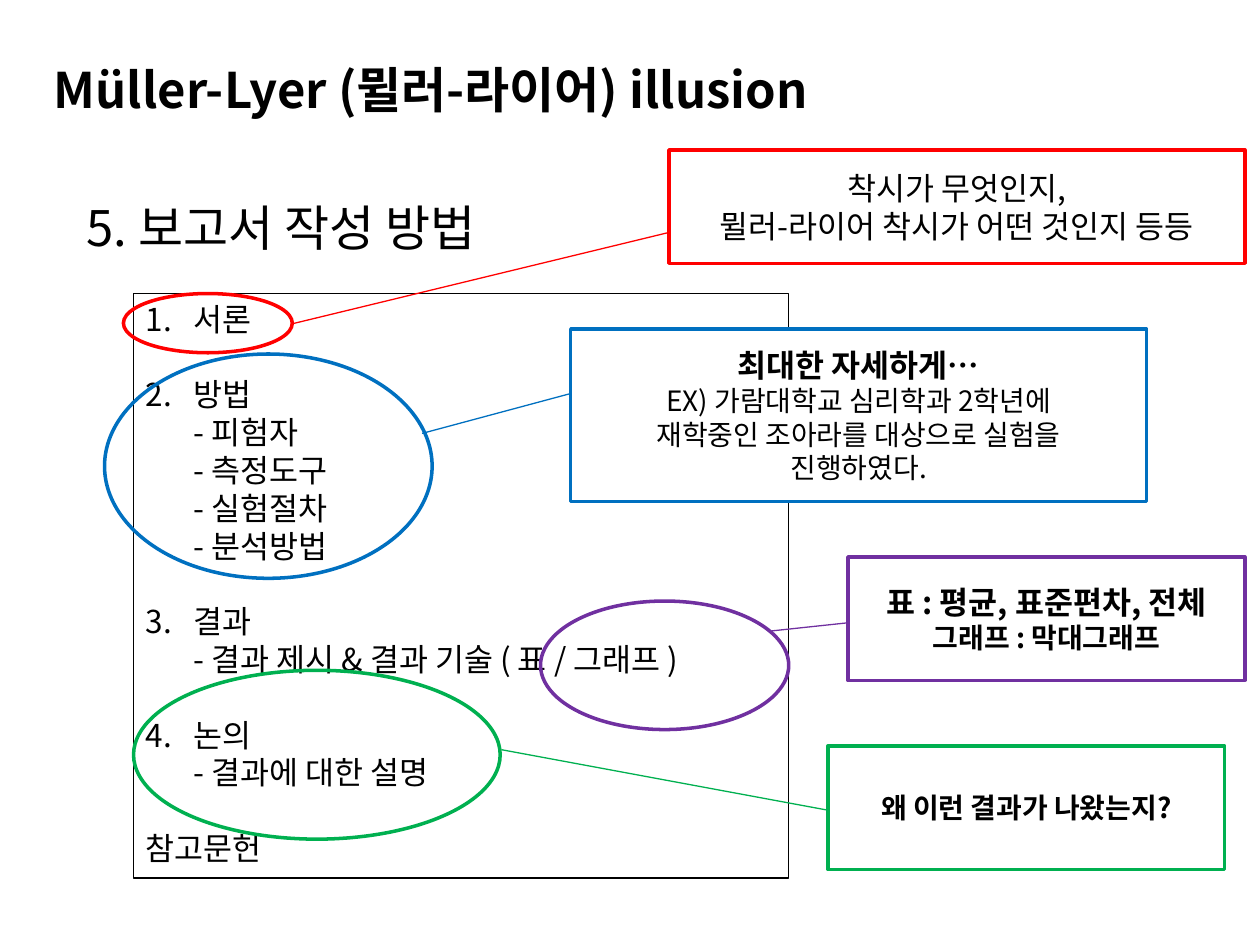
from lxml import etree
from pptx import Presentation
from pptx.dml.color import RGBColor
from pptx.enum.shapes import MSO_CONNECTOR, MSO_SHAPE
from pptx.enum.text import MSO_ANCHOR, PP_ALIGN
from pptx.oxml.ns import qn
from pptx.util import Inches, Pt

FONT = "Noto Sans CJK KR"
LINE_HEIGHT = 1.2
BLACK = RGBColor(0x00, 0x00, 0x00)
WHITE = RGBColor(0xFF, 0xFF, 0xFF)
RED = RGBColor(0xFF, 0x00, 0x00)
BLUE = RGBColor(0x00, 0x70, 0xC0)
PURPLE = RGBColor(0x70, 0x30, 0xA0)
GREEN = RGBColor(0x00, 0xB0, 0x50)

HEADINGS = [
    ("Müller-Lyer (뮐러-라이어) illusion", (0.33, 0.42, 6.32, 0.57), True),
    ("5. 보고서 작성 방법", (0.59, 1.52, 6.46, 0.57), False),
]

OUTLINE_AREA = (1.06, 2.33, 5.2, 4.64)
SECTIONS = [
    ["서론"],
    ["방법", "- 피험자", "- 측정도구", "- 실험절차", "- 분석방법"],
    ["결과", "- 결과 제시 & 결과 기술 ( 표 / 그래프 )"],
    ["논의", "- 결과에 대한 설명"],
]
REFERENCES = "참고문헌"

# Each note: lines of (text, size, bold)
CALLOUTS = [
    dict(color=RED, ring=(0.98, 2.33, 1.34, 0.47),
         link=(2.32, 2.57, 6.65, 1.52), note=(5.31, 1.19, 4.57, 0.9),
         lines=[("착시가 무엇인지,", 18, False),
                ("뮐러-라이어 착시가 어떤 것인지 등등", 18, False)]),
    dict(color=BLUE, ring=(0.83, 2.81, 2.6, 1.78),
         link=(3.35, 3.44, 4.84, 3.04), note=(4.53, 2.61, 4.57, 1.37),
         lines=[("최대한 자세하게…", 18, True),
                ("EX) 가람대학교 심리학과 2학년에", 16, False),
                ("재학중인 조아라를 대상으로 실험을", 16, False),
                ("진행하였다.", 16, False)]),
    dict(color=PURPLE, ring=(4.29, 4.77, 1.97, 1.02),
         link=(6.1, 5.01, 6.85, 4.93), note=(6.73, 4.42, 3.15, 0.98),
         lines=[("표 : 평균, 표준편차, 전체", 18, True),
                ("그래프 : 막대그래프", 16, True)]),
    dict(color=GREEN, ring=(1.06, 5.32, 2.91, 1.34),
         link=(3.98, 5.95, 6.57, 6.43), note=(6.57, 5.92, 3.15, 0.98),
         lines=[("왜 이런 결과가 나왔는지?", 16, True)]),
]


def inches(values):
    return [Inches(value) for value in values]


def write(para, text, size=18, bold=False, align=PP_ALIGN.LEFT, before=0):
    para.alignment = align
    para.line_spacing = Pt(size * LINE_HEIGHT)
    para.space_before = Pt(before)
    for index, line in enumerate(text.split("\n")):
        if index:
            para.add_line_break()
        span = para.add_run()
        span.text = line
        span.font.name = FONT
        span.font.size = Pt(size)
        span.font.bold = bold
        span.font.color.rgb = BLACK
        east_asian = etree.SubElement(span.font._element, qn("a:ea"))
        east_asian.set("typeface", FONT)


def number(para):
    """Give the paragraph an automatic number and a hanging indent."""
    properties = para._p.get_or_add_pPr()
    properties.set("marL", str(Inches(0.38)))
    properties.set("indent", str(-Inches(0.38)))
    bullet = etree.SubElement(properties, qn("a:buAutoNum"))
    bullet.set("type", "arabicPeriod")


def add_outlined(page, kind, area, color, width, fill=None):
    shape = page.shapes.add_shape(kind, *inches(area))
    shape.shadow.inherit = False
    shape.line.color.rgb = color
    shape.line.width = Pt(width)
    if fill is None:
        shape.fill.background()
    else:
        shape.fill.solid()
        shape.fill.fore_color.rgb = fill
    shape.text_frame.word_wrap = True
    return shape


def add_link(page, ends, color):
    link = page.shapes.add_connector(MSO_CONNECTOR.STRAIGHT, *inches(ends))
    link.line.color.rgb = color
    link.line.width = Pt(0.75)
    etree.SubElement(link._element.spPr, qn("a:effectLst"))


def add_outline(page):
    frame = add_outlined(page, MSO_SHAPE.RECTANGLE, OUTLINE_AREA, BLACK, 0.75).text_frame
    frame.vertical_anchor = MSO_ANCHOR.TOP
    gap = 18 * LINE_HEIGHT
    for index, lines in enumerate(SECTIONS):
        para = frame.add_paragraph() if index else frame.paragraphs[0]
        write(para, "\n".join(lines), before=gap if index else 0)
        number(para)
    write(frame.add_paragraph(), REFERENCES, before=gap)


def add_callout(page, color, ring, link, note, lines):
    add_outlined(page, MSO_SHAPE.OVAL, ring, color, 2)
    add_link(page, link, color)
    frame = add_outlined(page, MSO_SHAPE.RECTANGLE, note, color, 2, WHITE).text_frame
    frame.vertical_anchor = MSO_ANCHOR.MIDDLE
    for index, (text, size, bold) in enumerate(lines):
        para = frame.add_paragraph() if index else frame.paragraphs[0]
        write(para, text, size=size, bold=bold, align=PP_ALIGN.CENTER)


def main():
    deck = Presentation()
    deck.slide_width, deck.slide_height = Inches(10), Inches(7.5)
    page = deck.slides.add_slide(deck.slide_layouts[6])
    for text, area, bold in HEADINGS:
        box = page.shapes.add_textbox(*inches(area))
        box.text_frame.word_wrap = True
        write(box.text_frame.paragraphs[0], text, size=28, bold=bold)
    add_outline(page)
    for callout in CALLOUTS:
        add_callout(page, **callout)
    deck.save("out.pptx")


if __name__ == "__main__":
    main()
